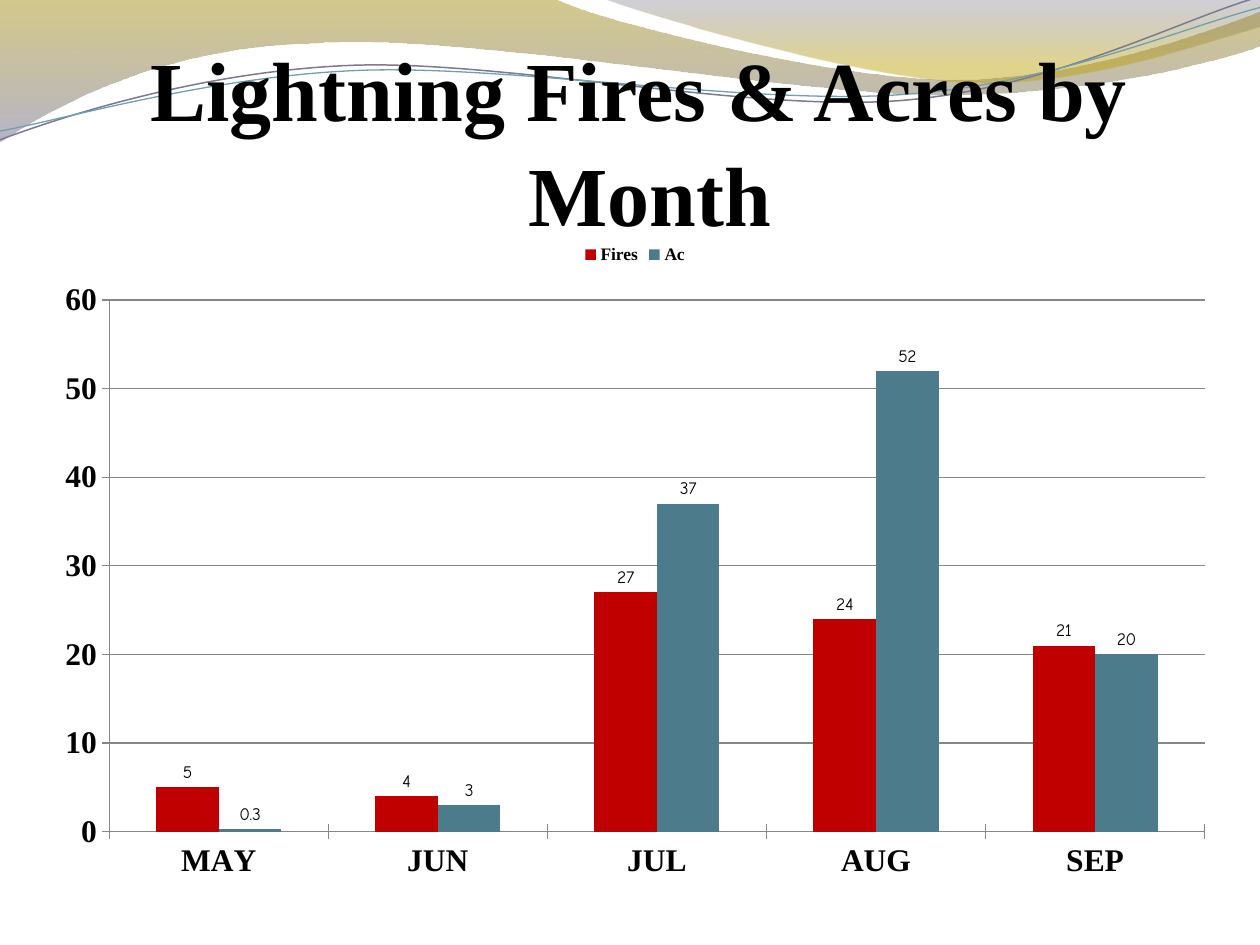
import pptx
import pptx.chart.data
import pptx.dml.color
import pptx.enum.chart
import pptx.enum.text
import pptx.oxml
import pptx.oxml.ns
import pptx.util
from dataclasses import dataclass
from lxml import etree
from pptx.util import Inches


@dataclass(frozen=True)
class Theme:
    text: str = "000000"
    text_outline: str = "4D4D4D"
    fires: str = "C00000"
    acres: str = "4C7C8B"
    grid: str = "868686"
    gold: str = "9E8700"
    bright_gold: str = "BDA100"
    violet: str = "7B769C"
    dark_violet: str = "66627C"
    violet_line: str = "7C7991"
    blue_line: str = "6EA0B0"
    serif: str = "Times New Roman"
    sans: str = "Comic Neue"
    title_size: int = 48
    axis_size: int = 18
    label_size: int = 10


THEME = Theme()


def rgb(value):
    return pptx.dml.color.RGBColor.from_string(value)


def add_child(parent, tag, **attributes):
    return etree.SubElement(parent, pptx.oxml.ns.qn(tag), attributes)


def format_font(font, size, name=THEME.serif, bold=True, color=THEME.text):
    font.size = pptx.util.Pt(size)
    font.name = name
    font.bold = bold
    font.color.rgb = rgb(color)


def write_text(paragraph, text, size, alignment, outline=None, space_before=0):
    run = paragraph.add_run()
    run.text = text
    format_font(run.font, size)
    paragraph.alignment = alignment
    paragraph.space_before = pptx.util.Pt(space_before)
    if outline:
        properties = run.font._element
        line = properties.makeelement(pptx.oxml.ns.qn("a:ln"), {"w": "11430"})
        solid = add_child(line, "a:solidFill")
        add_child(solid, "a:srgbClr", val=outline)
        properties.insert(0, line)


def add_curve(slide, start, segments, closed=False):
    """Draw straight (x, y) and Bezier (x1, y1, x2, y2, x, y) segments in inches."""
    builder = slide.shapes.build_freeform(Inches(start[0]), Inches(start[1]))
    ends = [(Inches(segment[-2]), Inches(segment[-1])) for segment in segments]
    builder.add_line_segments(ends, close=closed)
    shape = builder.convert_to_shape()
    shape.shadow.inherit = False
    # Bend the straight segments that have control points
    lines = list(shape._element.iter(pptx.oxml.ns.qn("a:lnTo")))
    for line, segment in zip(lines, segments):
        if len(segment) == 6:
            bezier = line.makeelement(pptx.oxml.ns.qn("a:cubicBezTo"), {})
            for x, y in zip(segment[::2], segment[1::2]):
                add_child(bezier, "a:pt", x=str(Inches(x) - shape.left),
                          y=str(Inches(y) - shape.top))
            line.getparent().replace(line, bezier)
    return shape


def add_band(slide, start, segments, stops):
    shape = add_curve(slide, start, segments, closed=True)
    shape.line.fill.background()
    shape.fill.gradient()
    shape.fill.gradient_angle = 270
    for stop, (position, color, opacity) in zip(shape.fill.gradient_stops, stops):
        stop.position = position
        stop.color.rgb = rgb(color)
    colors = shape._element.spPr.iter(pptx.oxml.ns.qn("a:srgbClr"))
    for element, (_, _, opacity) in zip(colors, stops):
        add_child(element, "a:alpha", val=str(opacity * 1000))


def add_wave_line(slide, start, segments, color, width):
    shape = add_curve(slide, start, segments)
    shape.fill.background()
    shape.line.color.rgb = rgb(color)
    shape.line.width = pptx.util.Pt(width)


def add_waves(slide):
    add_band(slide, (-0.01, -0.01), [
        (4.4, -0.01),
        (4.76, 0.17, 6.64, 0.63, 7.58, 0.63),
        (8.53, 0.63, 9.58, 0.26, 10, 0.09),
        (10.01, 0.36),
        (9.83, 0.44, 8.7, 0.76, 7.46, 0.75),
        (6.22, 0.75, 3.82, 0.28, 2.57, 0.34),
        (1.29, 0.36, 0.46, 0.83, -0.01, 1.13),
    ], [(0, THEME.gold, 45), (1, THEME.violet, 55)])
    add_band(slide, (4.79, -0.01), [
        (5.09, 0.11, 6.82, 0.62, 7.69, 0.65),
        (8.56, 0.69, 9.61, 0.32, 10, 0.21),
        (10, 0),
    ], [(0, THEME.dark_violet, 30), (0.8, THEME.bright_gold, 45)])
    add_wave_line(slide, (0, 1.11), [
        (0.48, 0.93, 1.58, 0.57, 2.77, 0.52),
        (3.95, 0.47, 5.93, 0.89, 7.13, 0.8),
        (8.33, 0.71, 9.38, 0.15, 9.98, -0.02),
    ], THEME.violet_line, 0.85)
    add_wave_line(slide, (0, 1.04), [
        (0.47, 0.96, 1.64, 0.61, 2.83, 0.56),
        (4.03, 0.51, 5.97, 0.84, 7.17, 0.75),
        (8.36, 0.67, 9.41, 0.21, 10, 0.06),
    ], THEME.blue_line, 0.75)


def format_axis(axis):
    axis.major_tick_mark = pptx.enum.chart.XL_TICK_MARK.CROSS
    axis.format.line.color.rgb = rgb(THEME.grid)
    format_font(axis.tick_labels.font, THEME.axis_size)


def set_plot_area(chart, **fractions):
    plot_area = chart._chartSpace.chart.plotArea
    for old in plot_area.findall(pptx.oxml.ns.qn("c:layout")):
        plot_area.remove(old)
    layout = plot_area.makeelement(pptx.oxml.ns.qn("c:layout"), {})
    manual = add_child(layout, "c:manualLayout")
    add_child(manual, "c:layoutTarget", val="inner")
    for side in "xy":
        add_child(manual, f"c:{side}Mode", val="edge")
    for side in "xywh":
        add_child(manual, f"c:{side}", val=str(fractions[side]))
    plot_area.insert(0, layout)


def add_fire_chart(slide):
    data = pptx.chart.data.CategoryChartData()
    data.categories = ["MAY", "JUN", "JUL", "AUG", "SEP"]
    data.add_series("Fires", [5, 4, 27, 24, 21])
    data.add_series("Ac", [0.3, 3, 37, 52, 20])
    chart = slide.shapes.add_chart(
        pptx.enum.chart.XL_CHART_TYPE.COLUMN_CLUSTERED,
        Inches(0.33), Inches(1.83), Inches(9.42), Inches(5.25), data).chart
    chart.has_title = False
    format_font(chart.font, THEME.label_size, name=THEME.sans, bold=False)
    set_plot_area(chart, x=0.057, y=0.105, w=0.923, h=0.804)

    # Legend and axes
    chart.has_legend = True
    chart.legend.position = pptx.enum.chart.XL_LEGEND_POSITION.TOP
    chart.legend.include_in_layout = False
    format_font(chart.legend.font, THEME.label_size)
    format_axis(chart.category_axis)
    format_axis(chart.value_axis)
    chart.value_axis.minimum_scale = 0
    chart.value_axis.maximum_scale = 60
    chart.value_axis.major_unit = 10
    chart.value_axis.major_gridlines.format.line.color.rgb = rgb(THEME.grid)

    # Columns and their values
    plot = chart.plots[0]
    plot.gap_width = 150
    plot.overlap = 0
    plot.vary_by_categories = False
    for series, color in zip(plot.series, (THEME.fires, THEME.acres)):
        series.format.fill.solid()
        series.format.fill.fore_color.rgb = rgb(color)
        labels = series.data_labels
        labels.show_value = True
        labels.position = pptx.enum.chart.XL_LABEL_POSITION.OUTSIDE_END
        format_font(labels.font, THEME.label_size, name=THEME.sans, bold=False)


def fill_title(slide):
    title = slide.shapes.title
    title.left, title.top = Inches(0.17), Inches(0.17)
    title.width, title.height = Inches(9.97), Inches(1.72)
    frame = title.text_frame
    frame.word_wrap = True
    frame.auto_size = pptx.enum.text.MSO_AUTO_SIZE.SHAPE_TO_FIT_TEXT
    frame.vertical_anchor = pptx.enum.text.MSO_ANCHOR.TOP
    frame.margin_top, frame.margin_bottom = Inches(0.13), 0
    center = pptx.enum.text.PP_ALIGN.CENTER
    write_text(frame.paragraphs[0], "Lightning Fires & Acres by ",
               THEME.title_size, center, outline=THEME.text_outline)
    write_text(frame.add_paragraph(), "Month", THEME.title_size, center,
               outline=THEME.text_outline, space_before=2)
    # Bring the title in front of the waves and the chart
    title._element.getparent().append(title._element)


def main():
    presentation = pptx.Presentation()
    presentation.slide_width, presentation.slide_height = Inches(10), Inches(7.5)
    slide = presentation.slides.add_slide(presentation.slide_layouts[5])
    add_waves(slide)
    add_fire_chart(slide)
    fill_title(slide)
    presentation.save("out.pptx")


if __name__ == "__main__":
    main()
